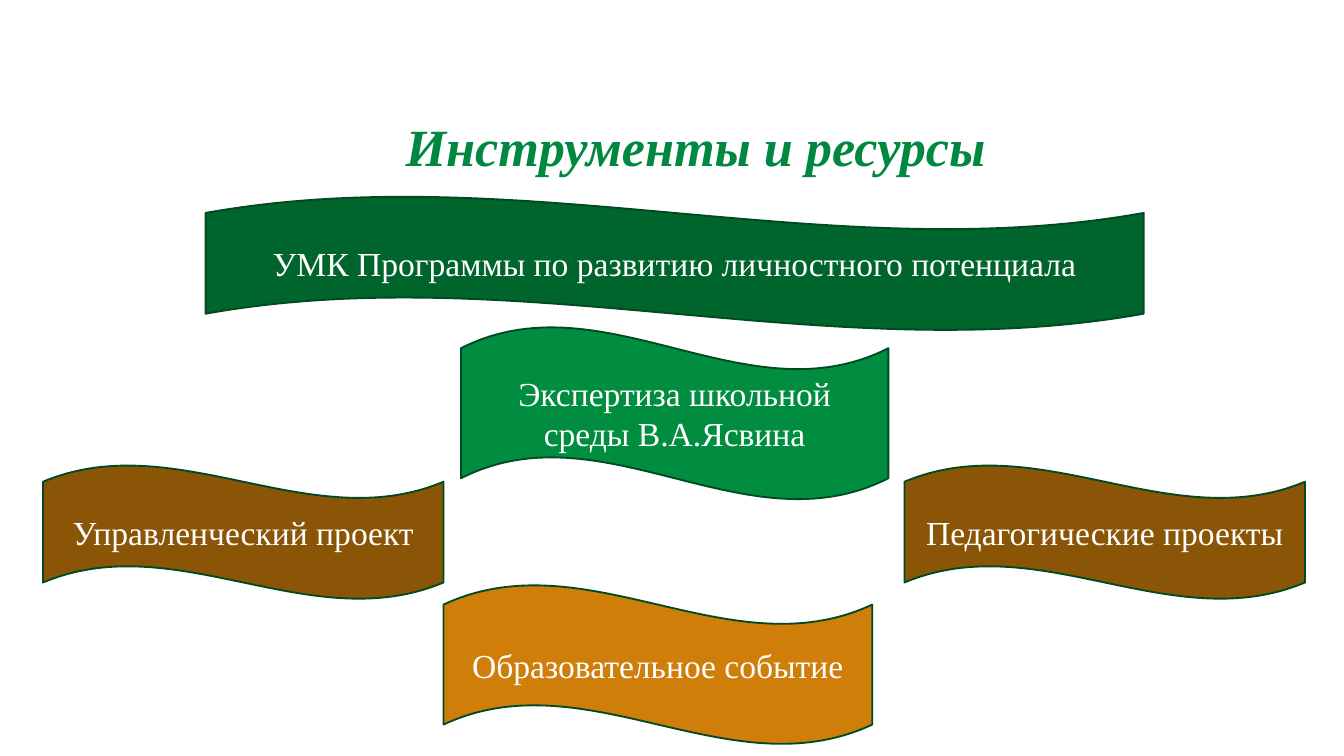
from dataclasses import dataclass

from pptx import Presentation
from pptx.dml.color import RGBColor
from pptx.enum.shapes import MSO_SHAPE
from pptx.enum.text import MSO_ANCHOR, MSO_AUTO_SIZE, PP_ALIGN
from pptx.util import Inches, Pt

WAVE = MSO_SHAPE.WAVE
CENTER = PP_ALIGN.CENTER
TOP = MSO_ANCHOR.TOP
MIDDLE = MSO_ANCHOR.MIDDLE
NO_AUTOFIT = MSO_AUTO_SIZE.NONE
TITLE_ONLY = 5

COLORS = {
    "title": "008841",
    "text": "FFFFFF",
    "outline": "004A21",
    "dark green": "00642D",
    "green": "008D3F",
    "brown": "8A5506",
    "orange": "CF7F09",
}
FONT = "Times New Roman"
TITLE_FORMAT = {"name": FONT, "size": Pt(28), "bold": True, "italic": True}
BANNER_FORMAT = {"name": FONT, "size": Pt(18)}


@dataclass
class Banner:
    text: str
    color: str
    left: float
    top: float
    width: float
    height: float = 1


BANNERS = [
    Banner("Управленческий проект", "brown", 0.32, 3.46, 2.98),
    Banner("Педагогические проекты", "brown", 6.73, 3.46, 2.98),
    Banner("Экспертиза школьной среды В.А.Ясвина", "green", 3.43, 2.43, 3.18, 1.29),
    Banner("Образовательное событие", "orange", 3.3, 4.35, 3.19, 1.19),
    Banner("УМК Программы по развитию личностного потенциала", "dark green", 1.53, 1.46, 6.98),
]


def rgb(name: str) -> RGBColor:
    return RGBColor.from_string(COLORS[name])


def write_text(shape, text: str, color: str, font_format: dict, anchor) -> None:
    frame = shape.text_frame
    frame.text = text
    frame.word_wrap = True
    frame.auto_size = NO_AUTOFIT
    frame.vertical_anchor = anchor
    paragraph = frame.paragraphs[0]
    paragraph.alignment = CENTER
    paragraph.line_spacing = 1.0
    paragraph.space_before = Pt(0)
    font = paragraph.runs[0].font
    for attribute, value in font_format.items():
        setattr(font, attribute, value)
    font.color.rgb = rgb(color)


def add_title(slide, text: str) -> None:
    title = slide.shapes.title
    title.left, title.top = Inches(0.81), Inches(0.8)
    title.width, title.height = Inches(8.73), Inches(0.57)
    write_text(title, text, "title", TITLE_FORMAT, TOP)


def add_banner(slide, banner: Banner) -> None:
    shape = slide.shapes.add_shape(
        WAVE, Inches(banner.left), Inches(banner.top),
        Inches(banner.width), Inches(banner.height))
    shape.shadow.inherit = False
    shape.fill.solid()
    shape.fill.fore_color.rgb = rgb(banner.color)
    shape.line.color.rgb = rgb("outline")
    shape.line.width = Pt(1)
    write_text(shape, banner.text, "text", BANNER_FORMAT, MIDDLE)


def main() -> None:
    # Widescreen 16:9 page
    presentation = Presentation()
    presentation.slide_width = Inches(10)
    presentation.slide_height = presentation.slide_width * 9 // 16
    slide = presentation.slides.add_slide(presentation.slide_layouts[TITLE_ONLY])

    # Heading
    add_title(slide, "Инструменты и ресурсы")

    # Wave banners, back to front
    for banner in BANNERS:
        add_banner(slide, banner)

    presentation.save("out.pptx")


if __name__ == "__main__":
    main()
